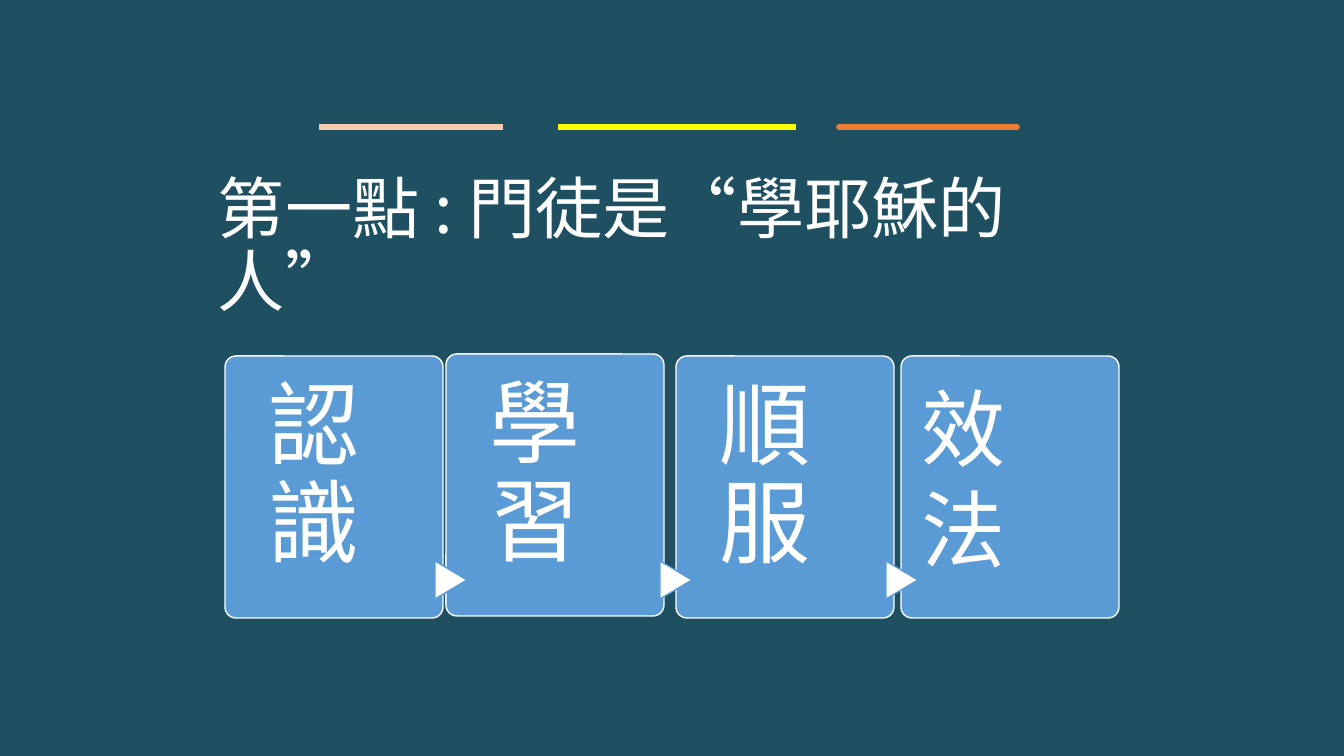
from pptx import Presentation
from pptx.dml.color import RGBColor
from pptx.enum.shapes import MSO_CONNECTOR as CONN, MSO_SHAPE as SHAPE
from pptx.enum.text import MSO_ANCHOR as ANCHOR
from pptx.oxml.ns import qn
from pptx.util import Pt
from lxml.etree import SubElement

WHITE, BLUE = "FFFFFF", "5B9BD5"


def px(n):
    return round(n * 914400 / 100.8)


def rgb(h):
    return RGBColor.from_string(h)


def add_text(s, box, text, size, font="Calibri", ea=None, anchor=ANCHOR.TOP,
             insets=(0, 0, 0, 0), spacing=None):
    tf = s.shapes.add_textbox(*map(px, box)).text_frame
    tf.word_wrap = True
    tf.vertical_anchor = anchor
    tf.margin_left, tf.margin_top, tf.margin_right, tf.margin_bottom = map(px, insets)
    for i, line in enumerate(text.split("\n")):
        p = tf.paragraphs[0] if i == 0 else tf.add_paragraph()
        p.line_spacing = spacing
        r = p.add_run()
        r.text = line
        r.font.size, r.font.name = Pt(size), font
        r.font.color.rgb = rgb(WHITE)
        if ea:
            SubElement(r._r.get_or_add_rPr(), qn("a:ea"), typeface=ea)


def add_shape(s, kind, box, fill, line):
    sp = s.shapes.add_shape(kind, *map(px, box))
    sp.shadow.inherit = False
    sp.fill.solid()
    sp.fill.fore_color.rgb = rgb(fill)
    sp.line.color.rgb = rgb(line)
    sp.line.width = Pt(1)
    return sp


def add_rule(s, x1, x2, y, color, cap="flat"):
    c = s.shapes.add_connector(CONN.STRAIGHT, px(x1), px(y), px(x2), px(y))
    c.line.color.rgb = rgb(color)
    c.line.width = Pt(4)
    c.line._get_or_add_ln().set("cap", cap)
    SubElement(c._element.spPr, qn("a:effectLst"))


def add_header(s, x, y):
    add_rule(s, x + 628, x + 806, y, "ED7D31", "rnd")
    add_rule(s, x + 108, x + 292, y, "F8CBAD")
    add_rule(s, x + 347, x + 585, y, "FFFF00")
    font = "Noto Sans CJK SC"
    add_text(s, (x, y + 66, 922, 132), "第一點 : 門徒是“學耶穌的人”", 48, font, font,
             ANCHOR.BOTTOM, (7, 4, 7, 4), 0.9)


def add_card(s, x, y, text, arrow_x=None):
    sp = add_shape(s, SHAPE.ROUNDED_RECTANGLE, (x, y, 218, 262), BLUE, WHITE)
    sp.adjustments[0] = 0.05
    if arrow_x is not None:
        arrow = add_shape(s, SHAPE.FLOWCHART_EXTRACT, (arrow_x, 564, 38, 32), WHITE, BLUE)
        arrow.rotation = 90
    if "\n" in text:
        add_text(s, (x + 10, y + 16, 106, 214), text, 60, insets=(10, 5, 10, 5))
    else:
        add_text(s, (x + 44, y, 162, 262), text, 65, insets=(0, 24, 0, 0), spacing=0.9)


def main():
    prs = Presentation()
    prs.slide_width, prs.slide_height = px(1344), px(756)
    s = prs.slides.add_slide(prs.slide_layouts[6])
    s.background.fill.solid()
    s.background.fill.fore_color.rgb = rgb("1E5062")
    add_header(s, 211, 127)
    for card in ((225, 356, "認識"), (446, 354, "學習", 432),
                 (676, 356, "順服", 657), (901, 356, "效\n法", 883)):
        add_card(s, *card)
    prs.save("out.pptx")


if __name__ == "__main__":
    main()
